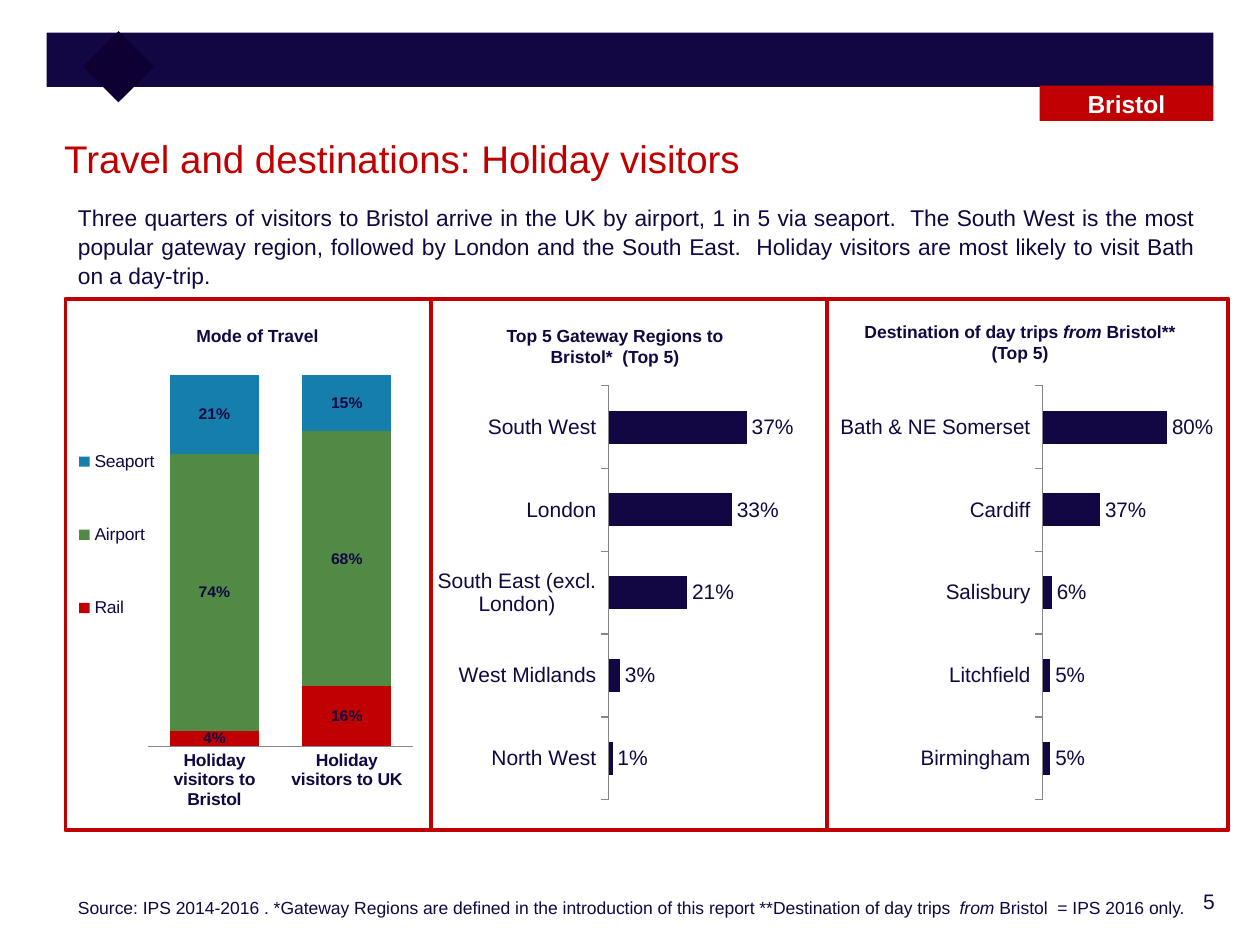
from lxml import etree
from pptx import Presentation
from pptx.chart.data import CategoryChartData
from pptx.dml.color import RGBColor
from pptx.enum.chart import XL_CHART_TYPE as CT, XL_LABEL_POSITION as LP
from pptx.enum.chart import XL_LEGEND_POSITION, XL_TICK_MARK as TM
from pptx.enum.shapes import MSO_SHAPE
from pptx.enum.text import MSO_ANCHOR, MSO_AUTO_SIZE, PP_ALIGN as AL
from pptx.oxml.ns import qn
from pptx.util import Inches, Pt

NAVY = RGBColor(0x12, 0x07, 0x42)
DARK = RGBColor(0x0E, 0x00, 0x33)
RED = RGBColor(0xC0, 0x00, 0x00)
GREEN = RGBColor(0x51, 0x8A, 0x45)
BLUE = RGBColor(0x15, 0x7E, 0xAB)
GREY = RGBColor(0x86, 0x86, 0x86)
WHITE = RGBColor(0xFF, 0xFF, 0xFF)


def write(tf, paragraphs, align, size, color=NAVY, bold=False):
    tf.word_wrap = True
    tf.auto_size = MSO_AUTO_SIZE.NONE
    fmt = {"name": "Arial", "size": Pt(size), "bold": bold}
    for i, runs in enumerate(paragraphs):
        p = tf.paragraphs[0] if i == 0 else tf.add_paragraph()
        p.alignment = align
        for text in runs:
            r = p.add_run()
            r.text = text
            for key, value in fmt.items():
                setattr(r.font, key, value)
            r.font.italic = text.strip() == "from"
            r.font.color.rgb = color


def set_layout(parent, index, box, inner=False):
    for old in parent.findall(qn("c:layout")):
        parent.remove(old)
    layout = etree.Element(qn("c:layout"))
    manual = etree.SubElement(layout, qn("c:manualLayout"))
    values = [("layoutTarget", "inner")] if inner else []
    values += [("xMode", "edge"), ("yMode", "edge"), *zip("xywh", box)]
    for tag, value in values:
        etree.SubElement(manual, qn(f"c:{tag}")).set("val", str(value))
    parent.insert(index, layout)


prs = Presentation()
prs.slide_width, prs.slide_height = Inches(10), Inches(7.5)
s = prs.slides.add_slide(prs.slide_layouts[5])

title = s.shapes.title
title.left, title.top, title.width, title.height = map(Inches, (0.41, 0.95, 9.21, 0.61))
title.text_frame.vertical_anchor = MSO_ANCHOR.MIDDLE
write(title.text_frame, [["Travel and destinations: Holiday visitors"]], AL.LEFT, 22, RED)

blocks = [
    ((0.37, 0.26, 9.26, 0.43), NAVY, 0),
    ((0.74, 0.33, 0.4, 0.4), DARK, 45),
    ((8.25, 0.68, 1.38, 0.28), RED, 0),
]
panels = [((x, 2.37, w, 4.22), None, 0) for x, w in ((0.52, 2.9), (3.42, 3.14), (6.56, 3.19))]
for box, fill, rotation in blocks + panels:
    sp = s.shapes.add_shape(MSO_SHAPE.RECTANGLE, *map(Inches, box))
    sp.shadow.inherit = False
    sp.rotation = rotation
    if fill is None:
        sp.fill.background()
        sp.line.color.rgb = RED
        sp.line.width = Pt(2.25)
    else:
        sp.fill.solid()
        sp.fill.fore_color.rgb = fill
        sp.line.fill.background()
    if fill == RED:
        sp.text_frame.vertical_anchor = MSO_ANCHOR.MIDDLE
        write(sp.text_frame, [["Bristol"]], AL.CENTER, 14, WHITE, True)

summary = (
    "Three quarters of visitors to Bristol arrive in the UK by airport, 1 in 5 via seaport.  "
    "The South West is the most popular gateway region, followed by London and the South East.  "
    "Holiday visitors are most likely to visit Bath on a day-trip."
)
source = [
    "Source: IPS 2014-2016 . *Gateway Regions are defined in the introduction of this report "
    "**Destination of day trips  ",
    "from ",
    "Bristol  = IPS 2016 only.",
]
texts = [
    ((0.52, 1.56, 9.05, 0.74), [[summary]], AL.JUSTIFY, 13, False),
    ((1.46, 2.53, 1.47, 0.31), [["Mode of Travel"]], AL.LEFT, 10, True),
    ((3.82, 2.53, 2.12, 0.46), [["Top 5 Gateway Regions to Bristol*  (Top 5)"]], AL.CENTER, 10, True),
    ((6.38, 2.5, 3.43, 0.49),
     [["Destination of day trips ", "from", " Bristol**"], ["(Top 5)"]], AL.CENTER, 10, True),
    ((0.52, 7.07, 9.08, 0.27), [source], AL.LEFT, 10, False),
    ((8.53, 7, 1.21, 0.36), [["5"]], AL.RIGHT, 12, False),
]
for box, paragraphs, align, size, bold in texts:
    tf = s.shapes.add_textbox(*map(Inches, box)).text_frame
    write(tf, paragraphs, align, size, bold=bold)
    if size == 13:
        tf.paragraphs[0].line_spacing = 1.05

charts = [
    dict(kind=CT.COLUMN_STACKED_100, box=(0.49, 2.78, 2.91, 3.64),
         cats=["Holiday visitors to Bristol", "Holiday visitors to UK"],
         series=[("Rail", (0.04, 0.16), RED), ("Airport", (0.74, 0.68), GREEN),
                 ("Seaport", (0.21, 0.15), BLUE)],
         gap=49, top=1, plot=(0.236, 0.056, 0.722, 0.828)),
    dict(kind=CT.BAR_CLUSTERED, box=(3.42, 2.99, 2.96, 3.42),
         cats=["South West", "London", "South East (excl. London)", "West Midlands", "North West"],
         series=[("Series 1", (0.37, 0.33, 0.21, 0.03, 0.01), NAVY)],
         gap=150, top=0.5, plot=(0.477, 0.021, 0.5, 0.961)),
    dict(kind=CT.BAR_CLUSTERED, box=(6.67, 2.99, 2.96, 3.42),
         cats=["Bath & NE Somerset", "Cardiff", "Salisbury", "Litchfield", "Birmingham"],
         series=[("Series 1", (0.8, 0.37, 0.06, 0.05, 0.05), NAVY)],
         gap=150, top=1, plot=(0.54, 0.021, 0.426, 0.961)),
]
for c in charts:
    stacked = c["kind"] == CT.COLUMN_STACKED_100
    data = CategoryChartData(number_format="0%")
    data.categories = c["cats"]
    for name, values, color in c["series"]:
        data.add_series(name, values)
    chart = s.shapes.add_chart(c["kind"], *map(Inches, c["box"]), data).chart
    chart.has_title = False
    chart.has_legend = stacked
    chart.font.name = "Arial"
    chart.font.size = Pt(10 if stacked else 12)
    chart.font.color.rgb = NAVY
    if stacked:
        chart.legend.position = XL_LEGEND_POSITION.LEFT
        chart.legend.include_in_layout = False
        set_layout(chart.legend._element, 1, (0.03, 0.107, 0.24, 0.61))

    cat_axis, val_axis = chart.category_axis, chart.value_axis
    cat_axis.major_tick_mark = TM.NONE if stacked else TM.OUTSIDE
    cat_axis.reverse_order = not stacked
    cat_axis.format.line.color.rgb = GREY
    cat_axis.tick_labels.font.bold = stacked
    val_axis.visible = False
    val_axis.has_major_gridlines = False
    val_axis.minimum_scale, val_axis.maximum_scale = 0, c["top"]

    plot = chart.plots[0]
    plot.gap_width = c["gap"]
    plot.overlap = 100 if stacked else 0
    plot.vary_by_categories = False
    for ser, (name, values, color) in zip(plot.series, c["series"]):
        ser.format.fill.solid()
        ser.format.fill.fore_color.rgb = color
        labels = ser.data_labels
        labels.show_value = True
        labels.number_format = "0%"
        labels.number_format_is_linked = False
        labels.position = LP.CENTER if stacked else LP.OUTSIDE_END
        labels.font.size = Pt(9 if stacked else 12)
        labels.font.bold = stacked
        labels.font.color.rgb = NAVY
    set_layout(chart._chartSpace.chart.plotArea, 0, c["plot"], inner=True)

prs.save("out.pptx")
